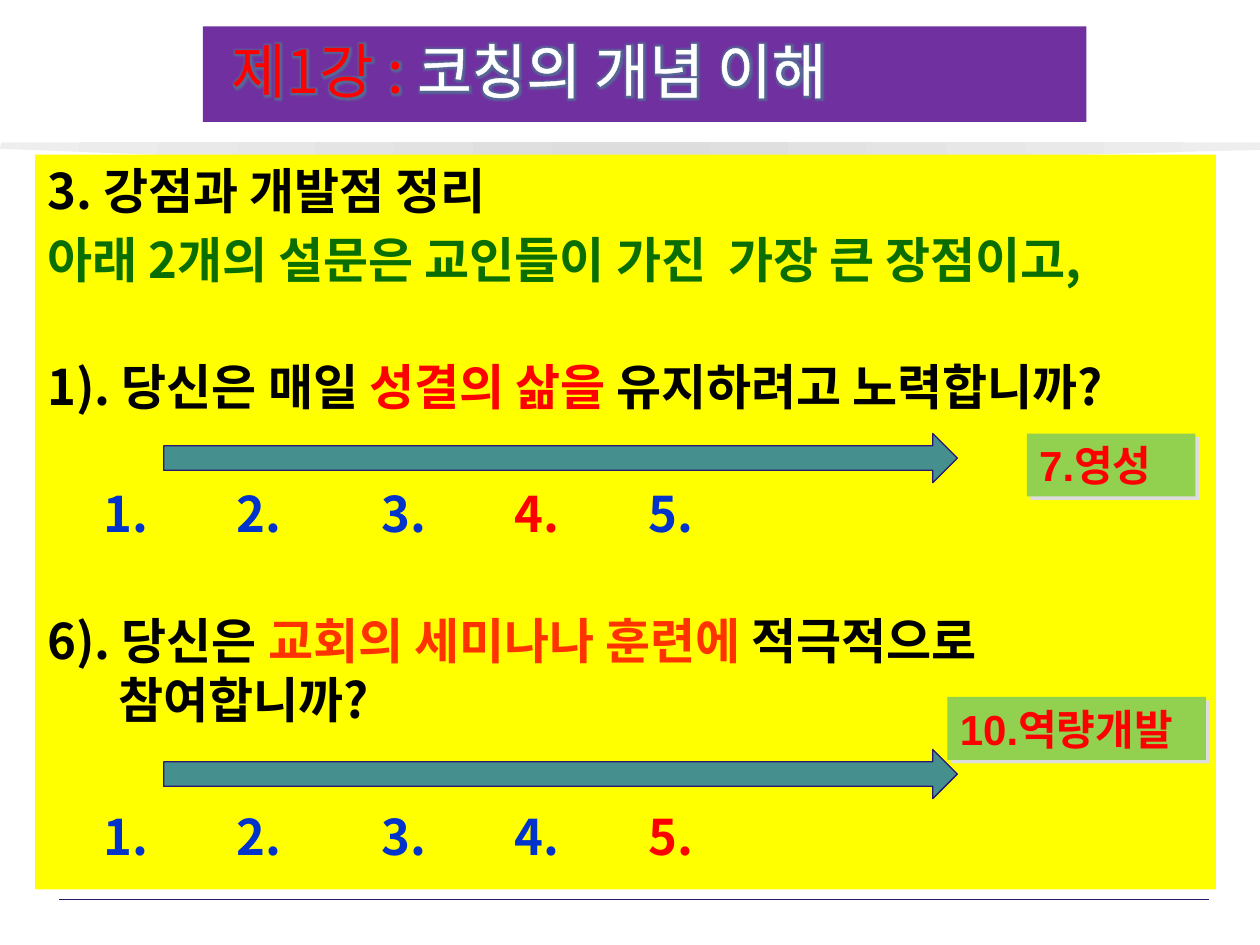
"""Build the coaching slide with two rated survey questions."""
from lxml.etree import SubElement
from copy import deepcopy
from pptx import Presentation
from pptx.dml.color import RGBColor
from pptx.enum.shapes import MSO_CONNECTOR, MSO_SHAPE
from pptx.enum.text import MSO_ANCHOR, PP_ALIGN
from pptx.oxml import parse_xml
from pptx.oxml.ns import nsdecls, qn
from pptx.util import Cm, Pt

NOTO = "Noto Sans CJK KR"
BLACK, RED, BLUE = "000000", "FF0000", "0033CC"


def tint(fill, color):
    fill.solid()
    fill.fore_color.rgb = RGBColor.from_string(color)


def write(para, parts, size, face, bold):
    for text, color in parts:
        run = para.add_run()
        run.text = text
        font = run.font
        font.size, font.name, font.bold = Pt(size), face, bold
        tint(font.fill, color)
        if face == NOTO:
            east = parse_xml(f'<a:ea {nsdecls("a")} typeface="{NOTO}"/>')
            font._element.find(qn("a:latin")).addnext(east)


deck = Presentation()
deck.slide_width, deck.slide_height = Cm(25.4), Cm(19.05)
slide = deck.slides.add_slide(deck.slide_layouts[5])
shapes = slide.shapes

edge = [(0.03, 2.87), (0, 3), (4, 3.15), (8.1, 3.23), (12.7, 3.24),
        (17.5, 3.2), (21.6, 3.12), (25.43, 3.02), (25.43, 2.87)]
points = [(Cm(x), Cm(y)) for x, y in edge]
draft = shapes.build_freeform(*points[0])
draft.add_line_segments(points[1:], close=True)
band = draft.convert_to_shape()
band.shadow.inherit = False
band.line.fill.background()
band.fill.gradient()
band.fill.gradient_angle = 0
stops = band.fill.gradient_stops
for stop, color in zip(stops, ("EEEEEE", "DDDDDD")):
    stop.color.rgb = RGBColor.from_string(color)
first, mid = stops[0]._gs, stops[1]._gs
mid.set("pos", "50000")
last = deepcopy(first)
last.set("pos", "100000")
mid.addnext(last)

rule = shapes.add_connector(
    MSO_CONNECTOR.STRAIGHT, Cm(1.19), Cm(18.13), Cm(24.38), Cm(18.13))
tint(rule.line.fill, "2B166E")
rule.line.width = Pt(0.75)
SubElement(rule._element.spPr, qn("a:effectLst"))

body = shapes.add_shape(
    MSO_SHAPE.RECTANGLE, Cm(0.71), Cm(3.12), Cm(23.8), Cm(14.81))
body.shadow.inherit = False
tint(body.fill, "FFFF00")
body.line.fill.background()
frame = body.text_frame
frame.word_wrap = True
frame.vertical_anchor = MSO_ANCHOR.TOP

lines = [
    (0, [("3. 강점과 개발점 정리", BLACK)]),
    (5.6, [("아래 2개의 설문은 교인들이 가진  가장 큰 장점이고,", "0A6E02")]),
    (39, [("1). 당신은 매일 ", BLACK), ("성결의 삶을 ", RED),
          ("유지하려고 노력합니까?", BLACK)]),
    (39, [("\t1.\t2.\t3.\t", BLUE), ("4.", RED), ("\t5.", BLUE)]),
    (39, [("6). 당신은 ", BLACK), ("교회의 세미나나 훈련에 ", "FF3300"),
          ("적극적으로 참여합니까?", BLACK)]),
    (45, [("\t1.\t2.\t3.\t4.\t", BLUE), ("5.", RED)]),
]
for num, (gap, parts) in enumerate(lines):
    para = frame.paragraphs[0] if num == 0 else frame.add_paragraph()
    props = para._p.get_or_add_pPr()
    if parts[0][0].startswith("\t"):
        tabs = SubElement(props, qn("a:tabLst"))
        for pos in (1.13, 3.81, 6.74, 9.42, 12.12):
            SubElement(tabs, qn("a:tab"), pos=str(Cm(pos)), algn="l")
    elif num > 1:
        props.set("marL", str(Cm(1.43)))
        props.set("indent", str(-Cm(1.43)))
    para.alignment = PP_ALIGN.LEFT
    para.line_spacing = Pt(33.6)
    para.space_before = Pt(gap)
    write(para, parts, 28, NOTO, True)

for top in (8.74, 15.11):
    arrow = shapes.add_shape(
        MSO_SHAPE.RIGHT_ARROW, Cm(3.3), Cm(top), Cm(16), Cm(0.99))
    arrow.shadow.inherit = False
    tint(arrow.fill, "458F8F")
    tint(arrow.line.fill, "2B166E")
    arrow.line.width = Pt(0.75)

for text, left, top, width in (("7.영성", 20.7, 8.74, 3.4),
                               ("10.역량개발", 19.1, 14.05, 5.21)):
    label = shapes.add_shape(
        MSO_SHAPE.RECTANGLE, Cm(left), Cm(top), Cm(width), Cm(1.27))
    tint(label.fill, "92D050")
    label.line.fill.background()
    label.shadow.inherit = False
    shade = SubElement(label._element.spPr.find(qn("a:effectLst")),
                       qn("a:outerShdw"), dist=str(Pt(2.8)), dir="2700000",
                       algn="ctr", rotWithShape="0")
    SubElement(shade, qn("a:srgbClr"), val="DDDDDD")
    label.text_frame.word_wrap = False
    label.text_frame.vertical_anchor = MSO_ANCHOR.TOP
    para = label.text_frame.paragraphs[0]
    para.alignment = PP_ALIGN.LEFT
    write(para, [(text, RED)], 24, "Arial", True)

title = shapes.title
title.left, title.top, title.width, title.height = (
    Cm(4.09), Cm(0.53), Cm(17.81), Cm(1.93))
tint(title.fill, "7030A0")
frame = title.text_frame
frame.word_wrap = True
frame.vertical_anchor = MSO_ANCHOR.MIDDLE
frame.margin_left = Cm(0.58)
para = frame.paragraphs[0]
para.alignment = PP_ALIGN.LEFT
para.line_spacing = 0.9
write(para, [("제1강 : ", RED), ("코칭의 개념 이해", "FFFFFF")], 34, NOTO, False)
for run in para.runs:
    props = run.font._element
    props.insert(0, parse_xml(
        f'<a:ln {nsdecls("a")} w="{Pt(1.45)}"><a:solidFill>'
        '<a:srgbClr val="FFFFFF"/></a:solidFill></a:ln>'))
    props.find(qn("a:latin")).addprevious(parse_xml(
        f'<a:effectLst {nsdecls("a")}><a:glow rad="{Pt(5)}">'
        '<a:srgbClr val="458F8F"><a:alpha val="60000"/></a:srgbClr>'
        '</a:glow></a:effectLst>'))

deck.save("out.pptx")
